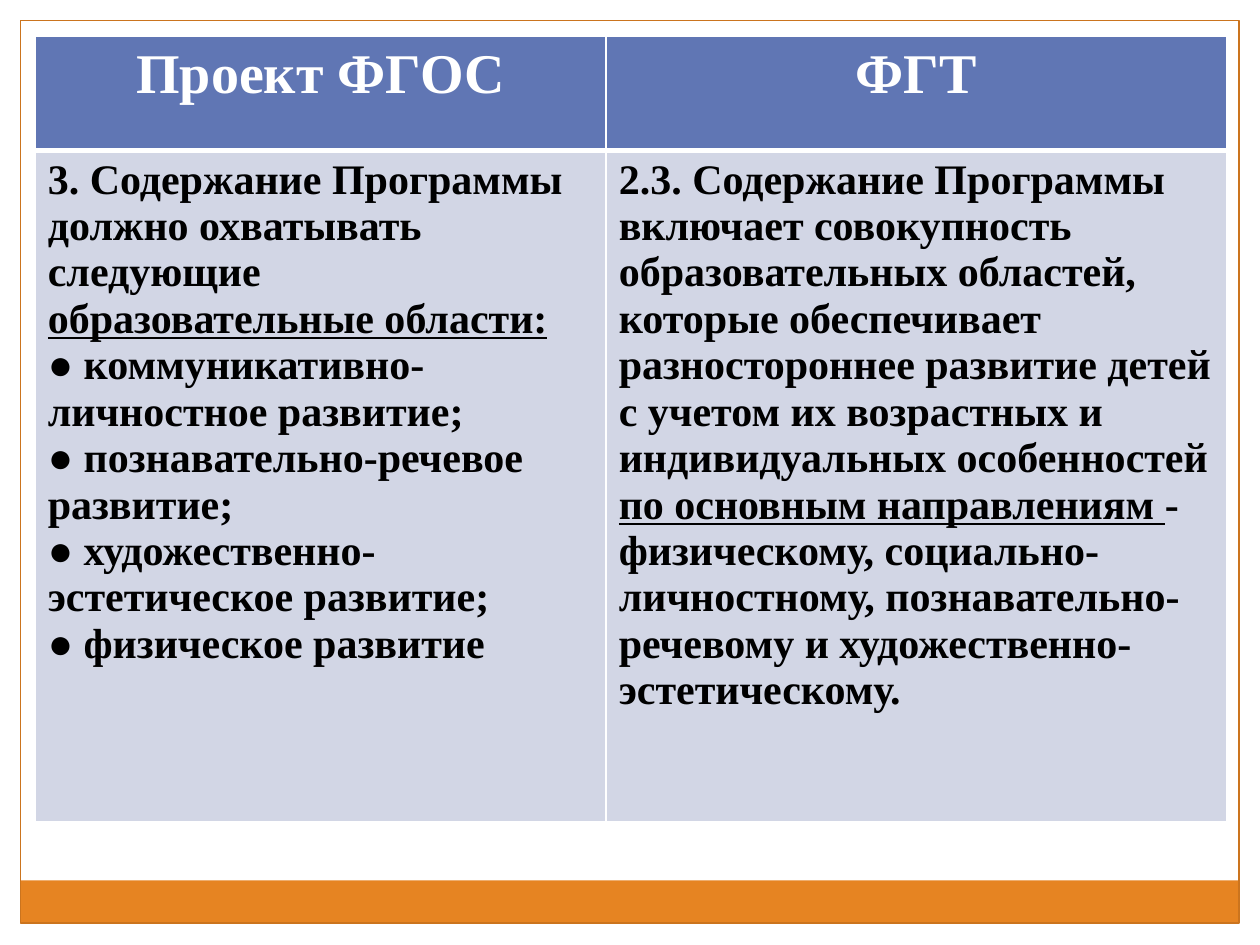
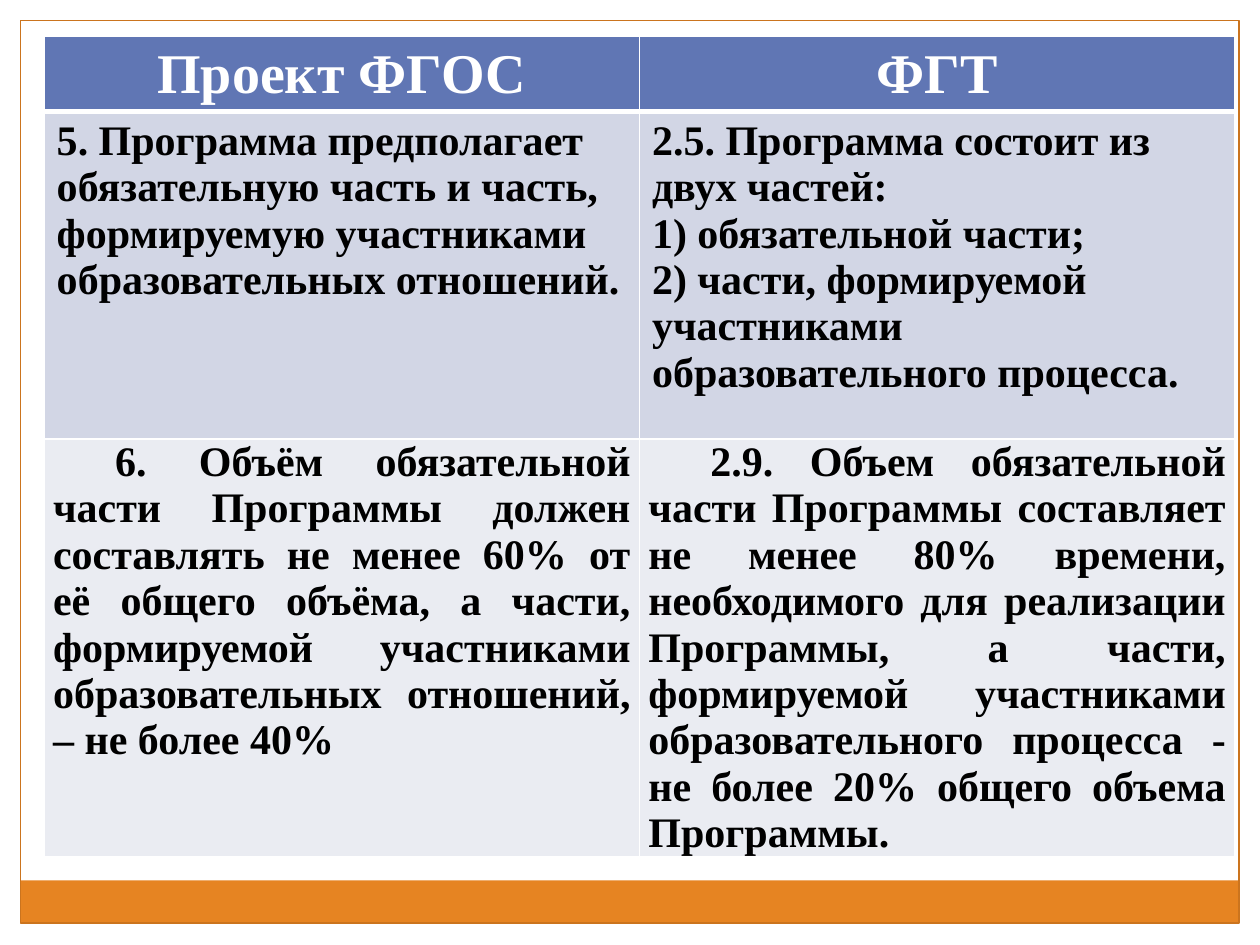
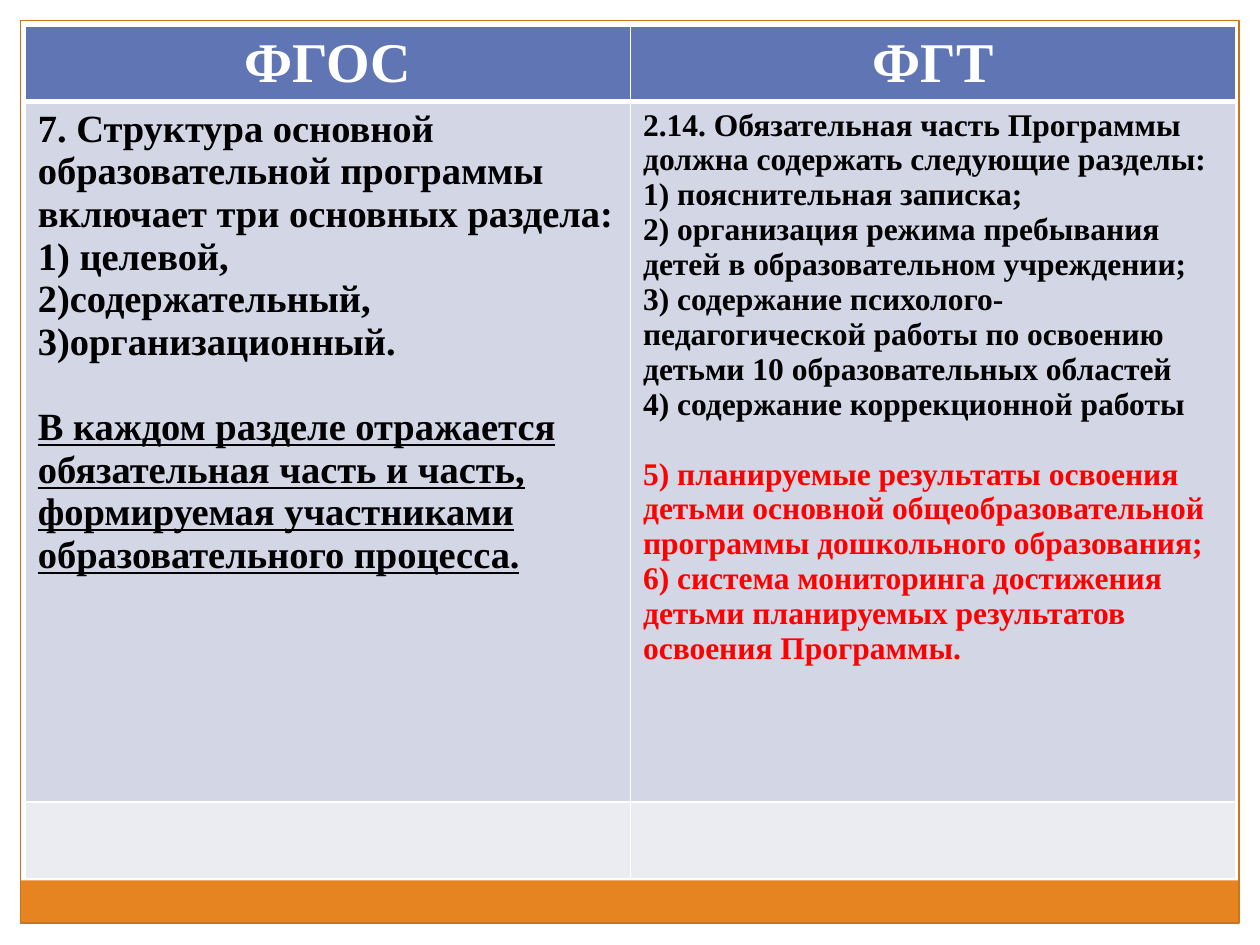
from typing import NamedTuple

from lxml.etree import SubElement
from pptx import Presentation
from pptx.dml.color import RGBColor
from pptx.enum.shapes import MSO_SHAPE
from pptx.enum.text import PP_ALIGN
from pptx.oxml.ns import qn
from pptx.util import Cm, Pt

COLORS = {
    "paper": "FFFFFF", "band": "E68422", "frame": "CB741E", "header": "6076B4",
    "odd_row": "D2D6E5", "even_row": "EAECF2", "text": "000000", "alert": "FF0000",
}
FONT = "Times New Roman"
WIDTH, HEIGHT, MARGIN = 25.4, 19.05, 0.42
INNER_WIDTH = WIDTH - 2 * MARGIN
FRAME_PARTS = [
    (0, 0, WIDTH, MARGIN, "paper", None),
    (WIDTH - MARGIN, 0, MARGIN, HEIGHT, "paper", None),
    (0, 0, MARGIN, HEIGHT, "paper", None),
    (MARGIN, 17.75, INNER_WIDTH, 0.86, "band", None),
    (MARGIN, MARGIN, INNER_WIDTH, 18.19, None, "frame"),
]


class Item(NamedTuple):
    text: str
    color: str = "text"
    gap: float = 0


class Entry(NamedTuple):
    items: list
    size: int = 24
    justified: bool = False


COMPARISONS = [
    {
        "corner": (0.71, 0.74), "columns": (11.51, 12.5), "rows": (2.29, 13.54),
        "headings": ("Проект ФГОС", "ФГТ"),
        "body": [(
            Entry([
                Item("3. Содержание Программы должно охватывать следующие "
                     "_образовательные области:_"),
                Item("● коммуникативно-личностное развитие;"),
                Item("● познавательно-речевое развитие;"),
                Item("● художественно-эстетическое развитие;"),
                Item("● физическое развитие"),
            ]),
            Entry([
                Item("2.3. Содержание Программы включает совокупность "
                     "образовательных областей, которые обеспечивает "
                     "разностороннее развитие детей с учетом их возрастных и "
                     "индивидуальных особенностей _по основным направлениям _"
                     "- физическому, социально-личностному, "
                     "познавательно-речевому и художественно-эстетическому."),
            ]),
        )],
    },
    {
        "corner": (0.89, 0.74), "columns": (12, 12), "rows": (1.5, 6.6, 6.91),
        "headings": ("Проект ФГОС", "ФГТ"),
        "body": [
            (
                Entry([
                    Item("5. Программа предполагает обязательную часть и часть, "
                         "формируемую участниками образовательных отношений."),
                ]),
                Entry([
                    Item("2.5. Программа состоит из двух частей:"),
                    Item("1) обязательной части;"),
                    Item("2) части, формируемой участниками "
                         "образовательного процесса."),
                ]),
            ),
            (
                Entry([
                    Item("6. Объём обязательной части Программы должен составлять "
                         "не менее 60% от её общего объёма, а части, формируемой "
                         "участниками образовательных отношений, – не более 40%"),
                ], justified=True),
                Entry([
                    Item("2.9. Объем обязательной части Программы составляет не "
                         "менее 80% времени, необходимого для реализации "
                         "Программы, а части, формируемой участниками "
                         "образовательного процесса - не более 20% общего "
                         "объема Программы."),
                ], justified=True),
            ),
        ],
    },
    {
        "corner": (0.51, 0.53), "columns": (12.2, 12.2), "rows": (1.52, 14.12, 1.55),
        "headings": ("ФГОС", "ФГТ"),
        "body": [
            (
                Entry([
                    Item("7. Структура основной образовательной программы "
                         "включает три основных раздела: 1) целевой,"),
                    Item("2)содержательный, 3)организационный."),
                    Item("_В каждом разделе отражается обязательная часть и часть, "
                         "формируемая участниками образовательного процесса._",
                         gap=24.4),
                ], size=22),
                Entry([
                    Item("2.14. Обязательная часть Программы должна содержать "
                         "следующие разделы:"),
                    Item("1) пояснительная записка;"),
                    Item("2) организация режима пребывания детей в "
                         "образовательном учреждении;"),
                    Item("3) содержание психолого-педагогической работы по "
                         "освоению детьми 10 образовательных областей"),
                    Item("4) содержание коррекционной работы"),
                    Item("5) планируемые результаты освоения детьми основной "
                         "общеобразовательной программы дошкольного образования;",
                         "alert", 20),
                    Item("6) система мониторинга достижения детьми планируемых "
                         "результатов освоения Программы.", "alert"),
                ], size=18),
            ),
            (Entry([]), Entry([])),
        ],
    },
]


def rgb(name):
    return RGBColor.from_string(COLORS[name])


def add_frame(slide):
    for left, top, width, height, fill, outline in FRAME_PARTS:
        part = slide.shapes.add_shape(
            MSO_SHAPE.RECTANGLE, Cm(left), Cm(top), Cm(width), Cm(height))
        part.shadow.inherit = False
        if fill:
            part.fill.solid()
            part.fill.fore_color.rgb = rgb(fill)
        else:
            part.fill.background()
        if outline:
            part.line.color.rgb = rgb(outline)
            part.line.width = Pt(0.75)
        else:
            part.line.fill.background()
        slide.slide_layout.shapes.element.append(part.element)


def style_cell(cell, fill, top=1, bottom=1):
    properties = cell._tc.get_or_add_tcPr()
    for side, width in (("L", 1), ("R", 1), ("T", top), ("B", bottom)):
        border = SubElement(properties, qn(f"a:ln{side}"), w=str(Pt(width)))
        solid = SubElement(border, qn("a:solidFill"))
        SubElement(solid, qn("a:srgbClr"), val=COLORS["paper"])
    cell.fill.solid()
    cell.fill.fore_color.rgb = rgb(fill)


def format_run(run, size, color):
    run.font.name = FONT
    run.font.size = Pt(size)
    run.font.bold = True
    run.font.color.rgb = rgb(color)


def fill_heading(cell, heading):
    style_cell(cell, "header", bottom=3)
    cell.text_frame.text = heading
    paragraph = cell.text_frame.paragraphs[0]
    paragraph.alignment = PP_ALIGN.CENTER
    format_run(paragraph.runs[0], 32, "paper")


def fill_entry(cell, entry):
    if entry.justified:
        cell.margin_left = cell.margin_right = Cm(0.18)
        cell.margin_top = cell.margin_bottom = 0
    frame = cell.text_frame
    for index, item in enumerate(entry.items):
        paragraph = frame.add_paragraph() if index else frame.paragraphs[0]
        if item.gap:
            paragraph.space_before = Pt(item.gap)
        if entry.justified:
            paragraph.alignment = PP_ALIGN.JUSTIFY
            paragraph._p.get_or_add_pPr().set("indent", str(Cm(1.25)))
        for position, text in enumerate(item.text.split("_")):
            if text:
                run = paragraph.add_run()
                run.text = text
                format_run(run, entry.size, item.color)
                run.font.underline = position % 2 == 1


def add_comparison(slide, comparison):
    left, top = comparison["corner"]
    columns, rows = comparison["columns"], comparison["rows"]
    table = slide.shapes.add_table(
        len(rows), len(columns), Cm(left), Cm(top),
        Cm(sum(columns)), Cm(sum(rows))).table
    table.first_row = table.horz_banding = False
    for column, width in zip(table.columns, columns):
        column.width = Cm(width)
    for row, height in zip(table.rows, rows):
        row.height = Cm(height)
    for column, heading in enumerate(comparison["headings"]):
        fill_heading(table.cell(0, column), heading)
    for row, entries in enumerate(comparison["body"], start=1):
        for column, entry in enumerate(entries):
            cell = table.cell(row, column)
            style_cell(cell, "odd_row" if row % 2 else "even_row",
                       top=3 if row == 1 else 1)
            fill_entry(cell, entry)


def main():
    deck = Presentation()
    deck.slide_width, deck.slide_height = Cm(WIDTH), Cm(HEIGHT)
    blank_layout = deck.slide_layouts[6]
    slides = [deck.slides.add_slide(blank_layout) for _ in COMPARISONS]
    add_frame(slides[0])
    for slide, comparison in zip(slides, COMPARISONS):
        add_comparison(slide, comparison)
    deck.save("out.pptx")


if __name__ == "__main__":
    main()
